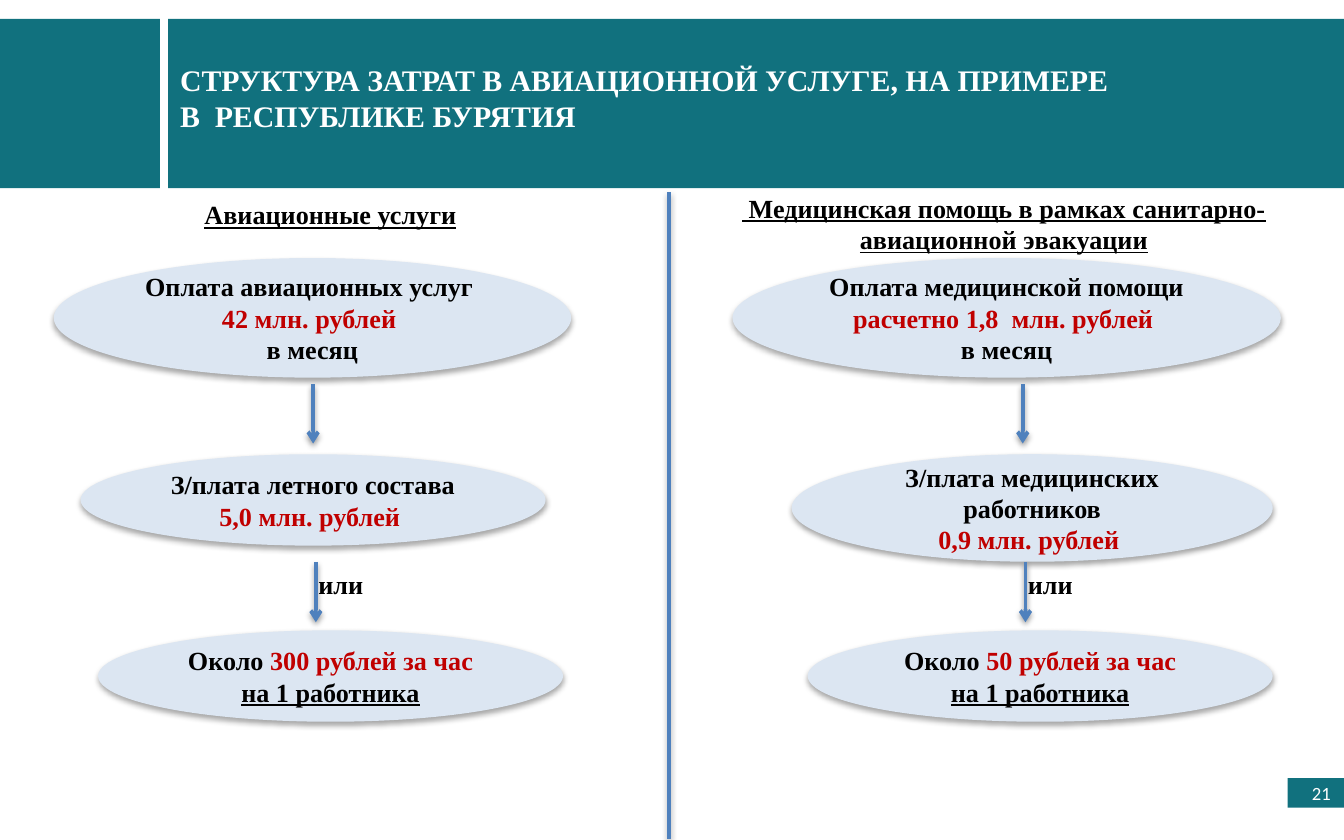
from lxml.etree import SubElement
from pptx import Presentation
from pptx.dml.color import RGBColor
from pptx.enum.shapes import MSO_CONNECTOR, MSO_SHAPE
from pptx.enum.text import MSO_ANCHOR, MSO_AUTO_SIZE, PP_ALIGN
from pptx.oxml.ns import qn
from pptx.util import Inches, Pt

COLORS = {
    "teal": "11717E",
    "white": "FFFFFF",
    "black": "000000",
    "red": "C00000",
    "oval": "DCE6F2",
    "line": "4F81BD",
}
COLUMN_OFFSET = 5.28


def color(name):
    """Return a named colour."""
    return RGBColor.from_string(COLORS[name])


def write_text(shape, paragraphs, size=14, font="Times New Roman", bold=True,
               align=PP_ALIGN.CENTER, anchor=MSO_ANCHOR.TOP, wrap=True):
    """Fill a shape with paragraphs of (text, colour, underline) runs."""
    frame = shape.text_frame
    frame.auto_size = MSO_AUTO_SIZE.NONE
    frame.word_wrap = wrap
    frame.vertical_anchor = anchor
    for index, runs in enumerate(paragraphs):
        paragraph = frame.paragraphs[0] if index == 0 else frame.add_paragraph()
        paragraph.alignment = align
        for text, color_name, underline in runs:
            run = paragraph.add_run()
            run.text = text.rstrip("\n")
            run.font.name = font
            run.font.size = Pt(size)
            run.font.bold = bold
            run.font.underline = underline
            run.font.color.rgb = color(color_name)
            if text.endswith("\n"):
                paragraph.add_line_break()


def add_shadow(properties, opacity, distance):
    """Give shape properties a soft shadow that falls downwards."""
    effects = properties.find(qn("a:effectLst"))
    if effects is None:
        effects = SubElement(properties, qn("a:effectLst"))
    shadow = SubElement(effects, qn("a:outerShdw"), blurRad=str(Pt(3.1)),
                        dist=str(Pt(distance)), dir="5400000", rotWithShape="0")
    shade = SubElement(shadow, qn("a:srgbClr"), val=COLORS["black"])
    SubElement(shade, qn("a:alpha"), val=str(opacity * 1000))


def add_filled_shape(slide, kind, box, fill):
    """Add a borderless preset shape without a shadow."""
    shape = slide.shapes.add_shape(kind, *map(Inches, box))
    shape.shadow.inherit = False
    shape.fill.solid()
    shape.fill.fore_color.rgb = color(fill)
    shape.line.fill.background()
    return shape


def add_oval(slide, box, paragraphs):
    """Add a cost oval with its text."""
    oval = add_filled_shape(slide, MSO_SHAPE.OVAL, box, "oval")
    add_shadow(oval._element.spPr, 35, 1.8)
    write_text(oval, paragraphs, anchor=MSO_ANCHOR.MIDDLE)


def add_label(slide, box, text, underline=False, **text_format):
    """Add a text box with one run."""
    label = slide.shapes.add_textbox(*map(Inches, box))
    write_text(label, [[(text, "black", underline)]], **text_format)


def add_vertical_line(slide, x, top, bottom, arrow=False):
    """Add a vertical line, with an arrowhead at its foot if wanted."""
    connector = slide.shapes.add_connector(
        MSO_CONNECTOR.STRAIGHT, Inches(x), Inches(top), Inches(x), Inches(bottom))
    connector.line.color.rgb = color("line")
    connector.line.width = Pt(2)
    if arrow:
        SubElement(connector.line._get_or_add_ln(), qn("a:tailEnd"), type="arrow")
    add_shadow(connector._element.spPr, 38, 1.6)


def add_column(slide, offset, heading, ovals, hourly_rate):
    """Add a heading and the chain of ovals under it."""
    heading_box, heading_text = heading
    add_label(slide, heading_box, heading_text, underline=True)
    for box, paragraphs in ovals:
        add_oval(slide, box, paragraphs)
    add_oval(slide, (0.73 + offset, 4.69, 3.46, 0.68), [[
        ("Около ", "black", False),
        (hourly_rate, "red", False),
        ("на 1 работника", "black", True),
    ]])
    add_vertical_line(slide, 2.33 + offset, 2.86, 3.3, arrow=True)
    add_vertical_line(slide, 2.35 + offset, 4.18, 4.63, arrow=True)
    add_label(slide, (2.27 + offset, 4.18, 0.54, 0.34), "или",
              align=PP_ALIGN.LEFT, wrap=False)


def add_header(slide):
    """Add the header bars, the title and the page number."""
    for left, width in ((1.25, 8.75), (0, 1.19)):
        add_filled_shape(slide, MSO_SHAPE.RECTANGLE, (left, 0.14, width, 1.26), "teal")
    title = slide.shapes.title
    title.left, title.top, title.width, title.height = map(
        Inches, (1.24, 0.41, 7.21, 0.64))
    write_text(title, [[(
        "СТРУКТУРА ЗАТРАТ В АВИАЦИОННОЙ УСЛУГЕ, НА ПРИМЕРЕ В  РЕСПУБЛИКЕ БУРЯТИЯ",
        "white", False)]], size=16, align=PP_ALIGN.LEFT)
    slide.shapes._spTree.append(title._element)
    number = add_filled_shape(slide, MSO_SHAPE.RECTANGLE, (9.58, 5.79, 0.42, 0.22), "teal")
    write_text(number, [[("21", "white", False)]], size=10, font="Calibri",
               bold=False, align=PP_ALIGN.RIGHT, anchor=MSO_ANCHOR.MIDDLE)


def main():
    """Build and save the slide."""
    presentation = Presentation()
    presentation.slide_width = Inches(10)
    presentation.slide_height = Inches(6.25)
    slide = presentation.slides.add_slide(presentation.slide_layouts[5])
    add_header(slide)
    add_vertical_line(slide, 4.98, 1.43, 6.24)
    add_column(
        slide, 0, ((0.21, 1.43, 4.5, 0.34), "Авиационные услуги"),
        [
            ((0.4, 1.92, 3.85, 0.89), [
                [("Оплата авиационных услуг ", "black", False)],
                [("42 млн. рублей \n", "red", False), ("в месяц", "black", False)],
            ]),
            ((0.6, 3.38, 3.46, 0.68), [[
                ("З/плата летного состава ", "black", False),
                ("5,0 млн. рублей ", "red", False),
            ]]),
        ], "300 рублей за час ")
    add_column(
        slide, COLUMN_OFFSET,
        ((5.38, 1.38, 4.18, 0.57),
         " Медицинская помощь в рамках санитарно-авиационной эвакуации"),
        [
            ((5.45, 1.92, 4.08, 0.89), [
                [("Оплата медицинской помощи", "black", False)],
                [("расчетно 1,8  млн. рублей \n", "red", False),
                 ("в месяц", "black", False)],
            ]),
            ((5.89, 3.38, 3.58, 0.8), [[
                ("З/плата медицинских работников\n", "black", False),
                ("0,9 млн. рублей ", "red", False),
            ]]),
        ], "50 рублей за час ")
    presentation.save("out.pptx")


if __name__ == "__main__":
    main()
